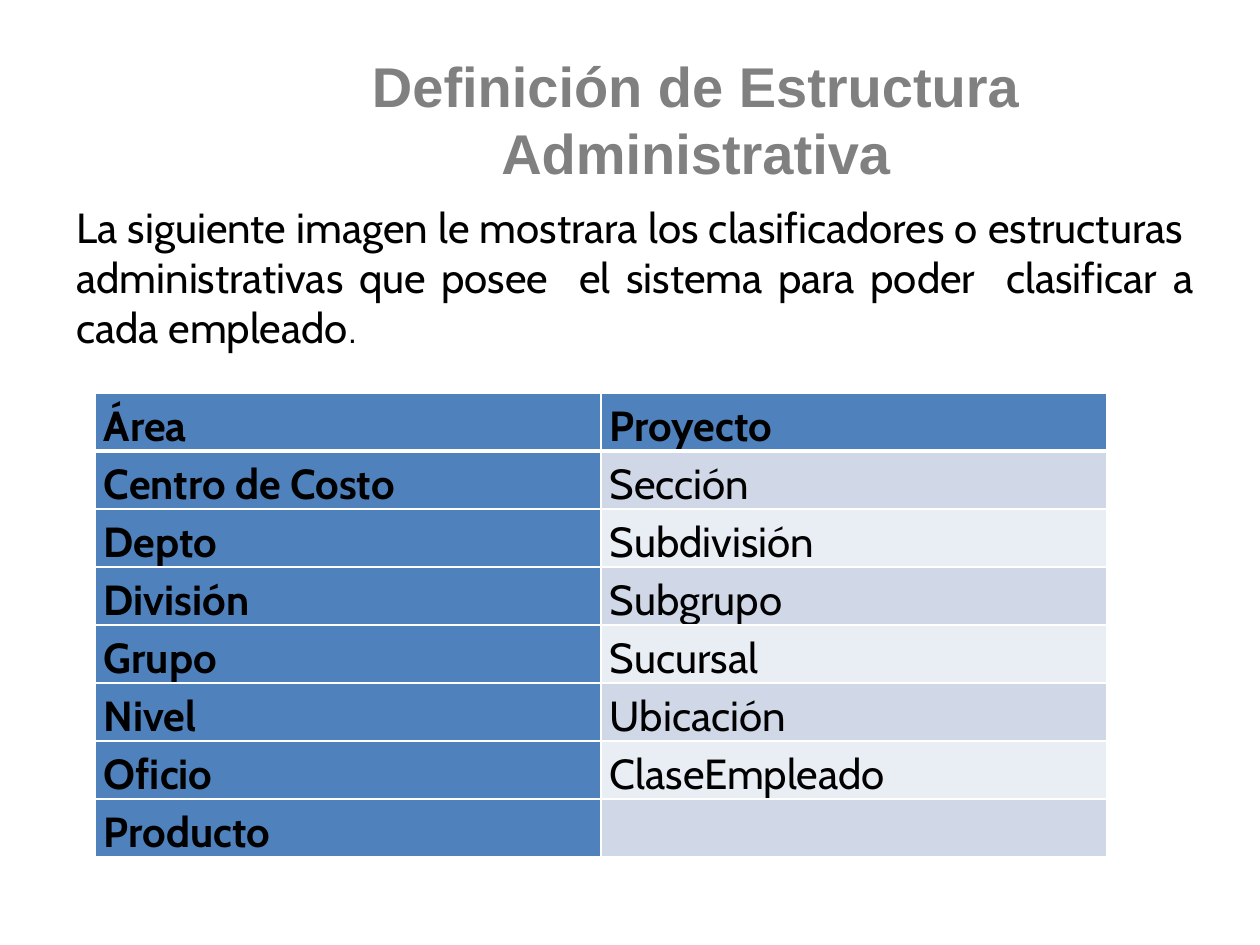
from lxml import etree
from pptx import Presentation
from pptx.dml.color import RGBColor
from pptx.enum.text import MSO_AUTO_SIZE, PP_ALIGN
from pptx.oxml.ns import qn
from pptx.util import Emu, Pt

CENTER, JUSTIFY = PP_ALIGN.CENTER, PP_ALIGN.JUSTIFY
FIT_SHAPE = MSO_AUTO_SIZE.SHAPE_TO_FIT_TEXT
PX_PER_INCH = 126
COLORS = {
    "title": "808080",
    "text": "000000",
    "header": "4F81BD",
    "odd_row": "D0D8E8",
    "even_row": "E9EDF4",
    "border": "FFFFFF",
}
ROWS = [
    ("Área", "Proyecto"),
    ("Centro de Costo", "Sección"),
    ("Depto", "Subdivisión"),
    ("División", "Subgrupo"),
    ("Grupo", "Sucursal"),
    ("Nivel", "Ubicación"),
    ("Oficio", "ClaseEmpleado"),
    ("Producto", ""),
]
INTRO = ("La siguiente imagen le mostrara los clasificadores o estructuras  "
         "administrativas que posee  el sistema para poder  clasificar a cada empleado")


def px(length):
    return Emu(round(length * 914400 / PX_PER_INCH))


def add_span(para, text, font="Cabin", size=24, color="text", bold=False):
    span = para.add_run()
    span.text = text
    span.font.name = font
    span.font.size = Pt(size)
    span.font.bold = bold
    span.font.color.rgb = RGBColor.from_string(COLORS[color])


def add_text_box(slide, left, top, width, height, align):
    """Add a wrapping text box and return its first paragraph."""
    box = slide.shapes.add_textbox(px(left), px(top), px(width), px(height))
    box.text_frame.word_wrap = True
    box.text_frame.auto_size = FIT_SHAPE
    para = box.text_frame.paragraphs[0]
    para.alignment = align
    return para


def set_borders(cell, widths):
    """Draw solid borders; widths maps each side (L, R, T, B) to points."""
    properties = cell._tc.get_or_add_tcPr()
    for index, (side, width) in enumerate(widths.items()):
        line = etree.Element(qn(f"a:ln{side}"), w=str(Pt(width)))
        fill = etree.SubElement(line, qn("a:solidFill"))
        etree.SubElement(fill, qn("a:srgbClr"), val=COLORS["border"])
        properties.insert(index, line)


def format_cell(cell, text, row, column):
    is_header = row == 0 or column == 0
    band = "odd_row" if row % 2 else "even_row"
    cell.fill.solid()
    cell.fill.fore_color.rgb = RGBColor.from_string(COLORS["header" if is_header else band])
    cell.margin_left = cell.margin_right = px(9)
    cell.margin_top = cell.margin_bottom = 0
    set_borders(cell, {"L": 1, "R": 1, "T": 3 if row == 1 else 1, "B": 3 if row == 0 else 1})
    if text:
        para = cell.text_frame.paragraphs[0]
        para.alignment = JUSTIFY
        para.line_spacing = 1.15
        para.space_after = Pt(6)
        add_span(para, text, bold=is_header)


def add_classifier_table(slide, left, top, column_width, row_height):
    columns = len(ROWS[0])
    table = slide.shapes.add_table(
        len(ROWS), columns, px(left), px(top),
        px(column_width * columns), px(row_height * len(ROWS))).table
    table.horz_banding = False
    table.first_col = True
    for row, texts in enumerate(ROWS):
        for column, text in enumerate(texts):
            format_cell(table.cell(row, column), text, row, column)


def main():
    deck = Presentation()
    deck.slide_width, deck.slide_height = px(1260), px(945)
    slide = deck.slides.add_slide(deck.slide_layouts[6])

    intro = add_text_box(slide, 64, 195, 1142, 165, JUSTIFY)
    add_span(intro, INTRO)
    add_span(intro, ".", font="Arial", size=18)

    add_classifier_table(slide, left=95, top=393, column_width=506, row_height=58)

    title = add_text_box(slide, 195, 45, 1002, 149, CENTER)
    add_span(title, "Definición de Estructura Administrativa",
             font="Arial", size=32, color="title", bold=True)

    deck.save("out.pptx")


if __name__ == "__main__":
    main()
